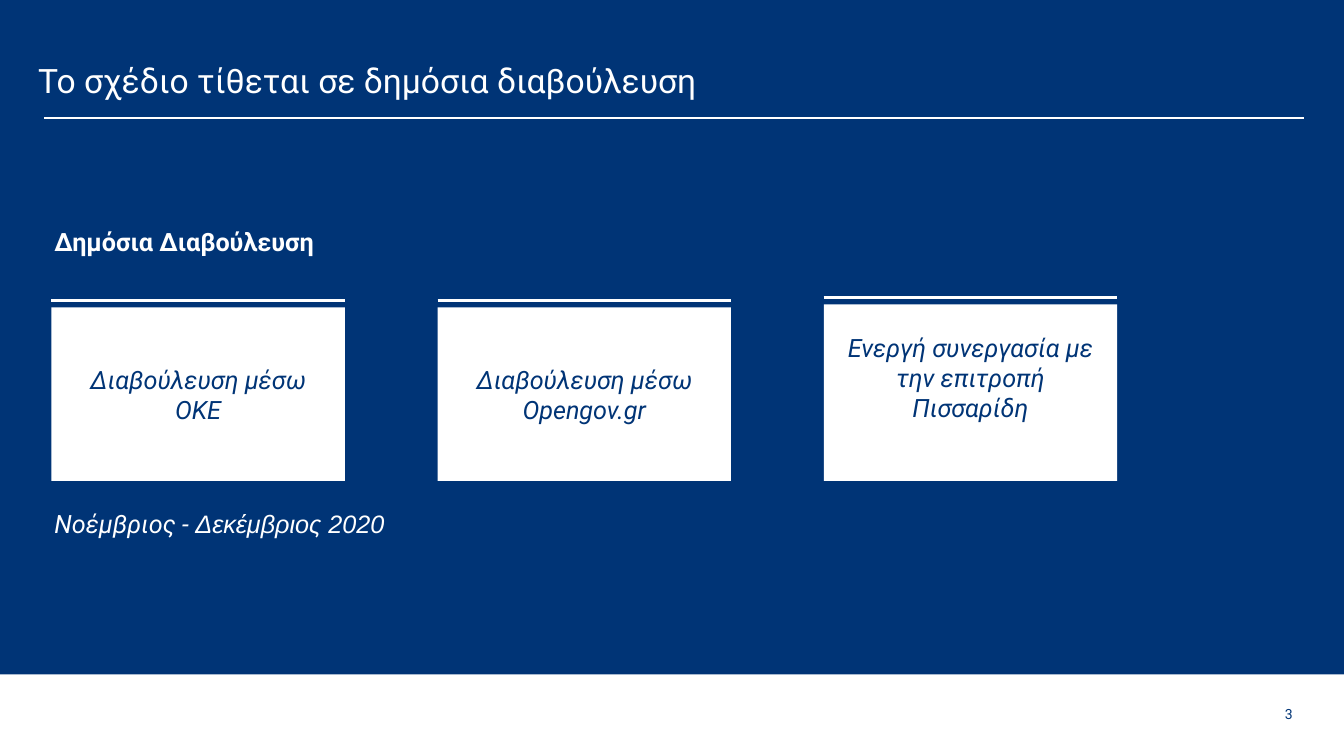
from dataclasses import dataclass

from lxml.etree import SubElement
from pptx import Presentation
from pptx.dml.color import RGBColor
from pptx.enum.shapes import MSO_CONNECTOR, MSO_SHAPE
from pptx.enum.text import MSO_ANCHOR, PP_ALIGN
from pptx.oxml.ns import qn
from pptx.shapes.autoshape import Shape
from pptx.slide import Slide
from pptx.util import Inches, Pt

NAVY = RGBColor(0x00, 0x34, 0x76)
PAGE_NAVY = RGBColor(0x01, 0x34, 0x76)
WHITE = RGBColor(0xFF, 0xFF, 0xFF)

CARD_LEFT = 0.51
CARD_STEP = 3.83
CARD_WIDTH = 2.91
CARD_BOTTOM = 4.77
RULE_GAP = 0.07


@dataclass(frozen=True)
class TextStyle:
    size: float
    color: RGBColor
    bold: bool = False
    italic: bool = False
    font: str = "Roboto"


@dataclass(frozen=True)
class Label:
    left: float
    top: float
    width: float
    height: float
    runs: tuple[tuple[str, TextStyle], ...]
    insets: tuple[float, float, float, float] = (0.07, 0.07, 0.06, 0.07)
    anchor: MSO_ANCHOR = MSO_ANCHOR.MIDDLE
    alignment: PP_ALIGN = PP_ALIGN.LEFT


@dataclass(frozen=True)
class Card:
    text: str
    top: float = 3.05
    bottom_inset: float = 0.05


TITLE_STYLE = TextStyle(24, WHITE)
HEADING_STYLE = TextStyle(18, WHITE, bold=True)
DATE_STYLE = TextStyle(18, WHITE, italic=True)
DATE_ARIAL_STYLE = TextStyle(18, WHITE, italic=True, font="Arial")
CARD_STYLE = TextStyle(18, NAVY, italic=True)
PAGE_STYLE = TextStyle(10, PAGE_NAVY)
WIDE_INSETS = (0.1, 0.1, 0.1, 0.1)

LABELS = [
    Label(0.28, 0.49, 12.5, 0.84,
          (("Το σχέδιο τίθεται σε δημόσια διαβούλευση", TITLE_STYLE),),
          WIDE_INSETS, MSO_ANCHOR.TOP),
    Label(0.47, 1.97, 4.78, 0.85, (("Δημόσια Διαβούλευση", HEADING_STYLE),)),
    Label(0.47, 4.77, 4.17, 0.85,
          (("Νοέμβριος - ", DATE_STYLE), ("Δεκέμβριος 2020", DATE_ARIAL_STYLE))),
    Label(12.35, 6.8, 0.57, 0.57, (("3", PAGE_STYLE),),
          WIDE_INSETS, alignment=PP_ALIGN.RIGHT),
]

CARDS = [
    Card("Διαβούλευση μέσω ΟΚΕ"),
    Card("Διαβούλευση μέσω Opengov.gr"),
    Card("Ενεργή συνεργασία με την επιτροπή Πισσαρίδη", top=3.02, bottom_inset=0.35),
]


def fill_text(shape: Shape, label: Label) -> None:
    frame = shape.text_frame
    frame.word_wrap = True
    frame.vertical_anchor = label.anchor
    left, top, right, bottom = label.insets
    frame.margin_left = Inches(left)
    frame.margin_top = Inches(top)
    frame.margin_right = Inches(right)
    frame.margin_bottom = Inches(bottom)
    paragraph = frame.paragraphs[0]
    paragraph.alignment = label.alignment
    for text, style in label.runs:
        run = paragraph.add_run()
        run.text = text
        run.font.name = style.font
        run.font.size = Pt(style.size)
        run.font.bold = style.bold
        run.font.italic = style.italic
        run.font.color.rgb = style.color


def add_label(slide: Slide, label: Label) -> None:
    shape = slide.shapes.add_textbox(
        Inches(label.left), Inches(label.top), Inches(label.width), Inches(label.height))
    fill_text(shape, label)


def add_white_box(slide: Slide, left: float, top: float, width: float, height: float) -> Shape:
    shape = slide.shapes.add_shape(
        MSO_SHAPE.RECTANGLE, Inches(left), Inches(top), Inches(width), Inches(height))
    shape.shadow.inherit = False
    shape.fill.solid()
    shape.fill.fore_color.rgb = WHITE
    shape.line.fill.background()
    return shape


def add_rule(slide: Slide, left: float, right: float, top: float, weight: float) -> None:
    connector = slide.shapes.add_connector(
        MSO_CONNECTOR.STRAIGHT, Inches(left), Inches(top), Inches(right), Inches(top))
    connector.line.color.rgb = WHITE
    connector.line.width = Pt(weight)
    SubElement(connector._element.spPr, qn("a:effectLst"))


def add_card(slide: Slide, card: Card, left: float) -> None:
    height = CARD_BOTTOM - card.top
    add_rule(slide, left, left + CARD_WIDTH, card.top - RULE_GAP, 2.25)
    shape = add_white_box(slide, left, card.top, CARD_WIDTH, height)
    fill_text(shape, Label(
        left, card.top, CARD_WIDTH, height, ((card.text, CARD_STYLE),),
        (0.16, 0.05, 0.16, card.bottom_inset), alignment=PP_ALIGN.CENTER))


def main() -> None:
    presentation = Presentation()
    presentation.slide_width = Inches(13.33)
    presentation.slide_height = Inches(7.5)
    slide = presentation.slides.add_slide(presentation.slide_layouts[6])
    slide.background.fill.solid()
    slide.background.fill.fore_color.rgb = NAVY

    add_white_box(slide, 0, 6.69, 13.33, 0.81)
    add_rule(slide, 0.44, 12.93, 1.17, 1)
    for index, card in enumerate(CARDS):
        add_card(slide, card, CARD_LEFT + index * CARD_STEP)
    for label in LABELS:
        add_label(slide, label)

    presentation.save("out.pptx")


if __name__ == "__main__":
    main()
